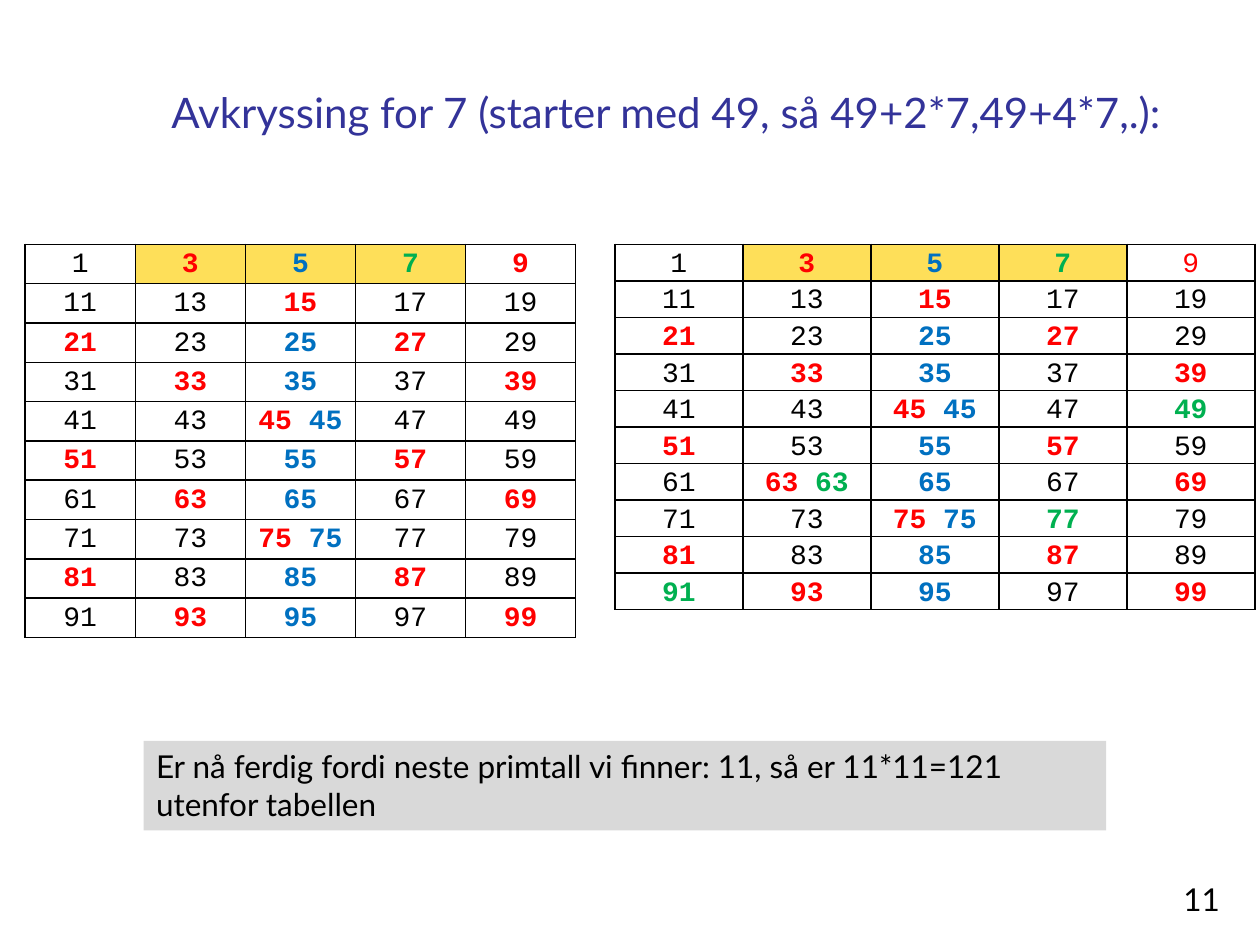
from lxml.etree import SubElement
from pptx import Presentation
from pptx.dml.color import RGBColor
from pptx.enum.shapes import MSO_SHAPE
from pptx.enum.text import MSO_ANCHOR, MSO_AUTO_SIZE, PP_ALIGN
from pptx.oxml.ns import qn
from pptx.util import Inches, Pt

PRIME_COLORS = {3: "FF0000", 5: "0070C0", 7: "00B050"}
BLACK = "000000"
HIGHLIGHT = "FEDF59"
ROWS, COLS = 10, 5


def rgb(value):
    return RGBColor.from_string(value)


def style_run(r, size, color, font="Lato", bold=False):
    r.font.name = font
    r.font.size = Pt(size)
    r.font.bold = bold
    r.font.color.rgb = rgb(color)


def write_text(tf, text, size, color, align=PP_ALIGN.LEFT, anchor=MSO_ANCHOR.BOTTOM):
    tf.word_wrap = True
    tf.auto_size = MSO_AUTO_SIZE.NONE
    tf.vertical_anchor = anchor
    tf.text = text
    p = tf.paragraphs[0]
    p.alignment = align
    style_run(p.runs[0], size, color)


def add_title(s, box, text):
    sp = s.shapes.title
    sp.left, sp.top, sp.width, sp.height = map(Inches, box)
    write_text(sp.text_frame, text, 24, "333399")


def add_slide_number(s, box, text):
    sp = s.shapes.add_textbox(*map(Inches, box))
    write_text(sp.text_frame, text, 18, BLACK, align=PP_ALIGN.RIGHT)


def add_note(s, box, text):
    sp = s.shapes.add_shape(MSO_SHAPE.RECTANGLE, *map(Inches, box))
    sp.shadow.inherit = False
    sp.fill.solid()
    sp.fill.fore_color.rgb = rgb("D9D9D9")
    sp.line.fill.background()
    write_text(sp.text_frame, text, 18, BLACK, anchor=MSO_ANCHOR.TOP)


def set_borders(cell):
    tcPr = cell._tc.get_or_add_tcPr()
    for i, side in enumerate(("lnL", "lnR", "lnT", "lnB")):
        ln = tcPr.makeelement(qn(f"a:{side}"), {"w": str(Pt(1))})
        fill = SubElement(ln, qn("a:solidFill"))
        SubElement(fill, qn("a:srgbClr"), val=BLACK)
        tcPr.insert(i, ln)


def crossing_primes(n, primes):
    """Primes that cross out n, each one starting from its own square."""
    return [p for p in primes if n >= p * p and n % p == 0]


def fill_cell(cell, n, primes, plain):
    cell.margin_left = cell.margin_right = Inches(0.07)
    cell.margin_top = cell.margin_bottom = 0
    if n in PRIME_COLORS:
        cell.fill.solid()
        cell.fill.fore_color.rgb = rgb(HIGHLIGHT)
        colors = [PRIME_COLORS[n]]
    else:
        cell.fill.background()
        colors = [PRIME_COLORS[q] for q in crossing_primes(n, primes)]
    set_borders(cell)

    p = cell.text_frame.paragraphs[0]
    p.alignment = PP_ALIGN.CENTER
    p.line_spacing = 1.15
    bold = bool(colors) and n not in plain
    colors = colors or [BLACK]
    for i, color in enumerate(colors):
        r = p.add_run()
        r.text = f"{n} " if i < len(colors) - 1 else str(n)
        style_run(r, 16, color, "Courier New", bold)


def add_sieve(s, box, primes, plain=()):
    """Table of odd numbers below 100; numbers in plain are never bold."""
    left, top, width, height = map(Inches, box)
    table = s.shapes.add_table(ROWS, COLS, left, top, width, height).table
    table.first_row = table.horz_banding = False
    for row in range(ROWS):
        for col in range(COLS):
            fill_cell(table.cell(row, col), 10 * row + 2 * col + 1, primes, plain)


def main():
    prs = Presentation()
    prs.slide_width, prs.slide_height = Inches(10), Inches(7.5)
    s = prs.slides.add_slide(prs.slide_layouts[5])
    add_title(s, (1.26, 0.23, 8.52, 0.91),
              "Avkryssing for 7 (starter med 49, så 49+2*7,49+4*7,.):")
    add_slide_number(s, (7.7, 6.83, 2.08, 0.5), "11")
    add_sieve(s, (0.2, 1.94, 4.37, 3.12), primes=(3, 5))
    add_sieve(s, (4.88, 1.94, 5.08, 2.9), primes=(3, 5, 7), plain=(9,))
    add_note(s, (1.14, 5.88, 7.64, 0.71),
             "Er nå ferdig fordi neste primtall vi finner: 11, "
             "så er 11*11=121 utenfor tabellen")
    prs.save("out.pptx")


if __name__ == "__main__":
    main()
